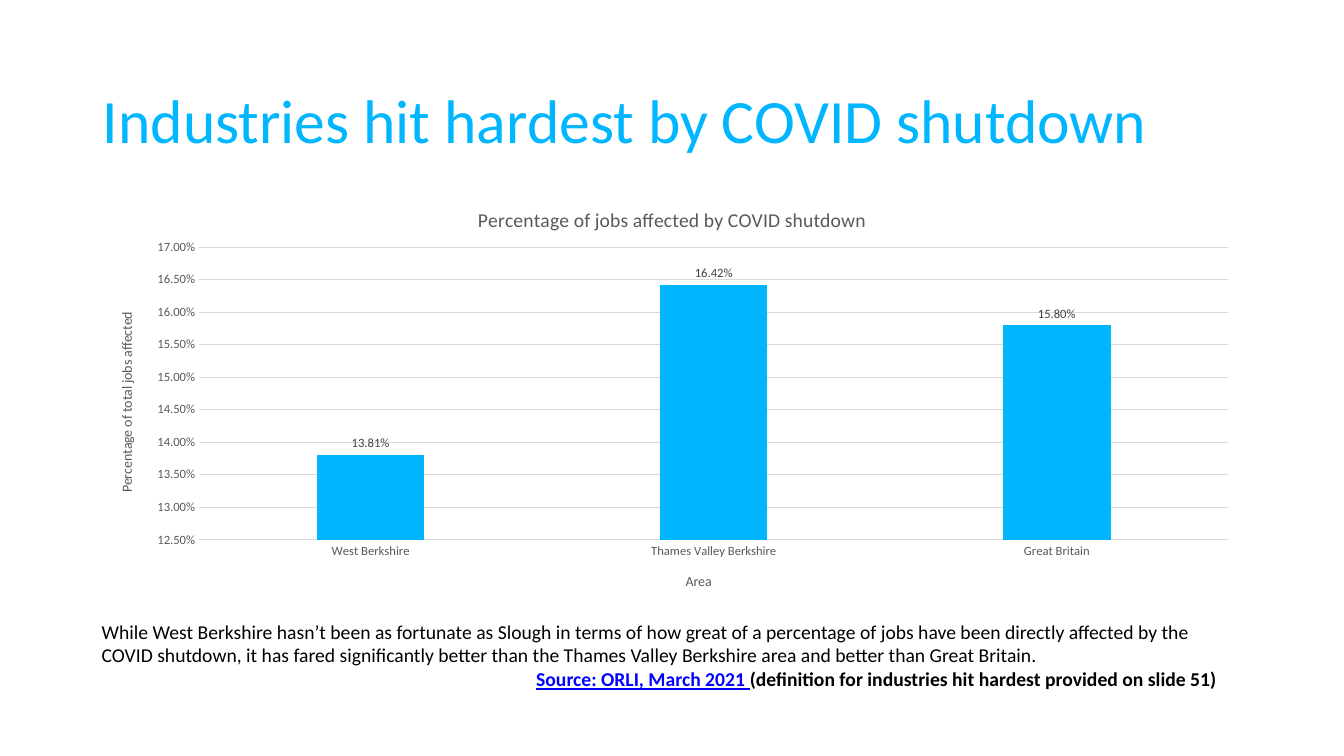
from lxml import etree
from pptx import Presentation
from pptx.chart.data import CategoryChartData
from pptx.dml.color import RGBColor
from pptx.enum import chart as c, text as t
from pptx.oxml.ns import qn
from pptx.util import Inches, Pt

BLUE, GREY, RULE = "00B7FF", "595959", "D9D9D9"


def style(font, size, color, bold=False):
    font.name, font.size, font.bold = "Calibri", Pt(size), bold
    font.color.rgb = RGBColor.from_string(color)


def place(element, index, **fractions):
    """Pin a chart part at fractions of the chart area."""
    for old in element.findall(qn("c:layout")):
        element.remove(old)
    layout = etree.Element(qn("c:layout"))
    manual = etree.SubElement(layout, qn("c:manualLayout"))
    if "w" in fractions:
        etree.SubElement(manual, qn("c:layoutTarget"), val="inner")
    for name in ("xMode", "yMode"):
        etree.SubElement(manual, qn("c:" + name), val="edge")
    for name, value in fractions.items():
        etree.SubElement(manual, qn("c:" + name), val=str(value))
    element.insert(index, layout)


presentation = Presentation()
presentation.slide_width, presentation.slide_height = Inches(13.33), Inches(7.5)
slide = presentation.slides.add_slide(presentation.slide_layouts[5])

# Title
title = slide.shapes.title
title.left, title.top = Inches(0.92), Inches(0.61)
title.width, title.height = Inches(11.5), Inches(1.24)
title.text_frame.vertical_anchor = t.MSO_ANCHOR.MIDDLE
paragraph = title.text_frame.paragraphs[0]
paragraph.alignment, paragraph.line_spacing = t.PP_ALIGN.LEFT, 0.9
run = paragraph.add_run()
run.text = "Industries hit hardest by COVID shutdown"
style(run.font, 44, BLUE)

# Chart
data = CategoryChartData(number_format="0.00%")
data.categories = ["West Berkshire", "Thames Valley Berkshire", "Great Britain"]
data.add_series("Series 1", [0.1381, 0.1642, 0.158])
chart = slide.shapes.add_chart(
    c.XL_CHART_TYPE.COLUMN_CLUSTERED,
    Inches(0.91), Inches(1.8), Inches(11.5), Inches(4.23), data).chart
style(chart.font, 10, "000000")
chart.has_legend = False

plot = chart.plots[0]
plot.gap_width, plot.overlap, plot.vary_by_categories = 219, -27, False
fill = plot.series[0].format.fill
fill.solid()
fill.fore_color.rgb = RGBColor.from_string(BLUE)
labels = plot.series[0].data_labels
labels.show_value = True
labels.position = c.XL_LABEL_POSITION.OUTSIDE_END
labels.number_format, labels.number_format_is_linked = "0.00%", False
style(labels.font, 9, "404040")

category_axis, value_axis = chart.category_axis, chart.value_axis
for axis in (category_axis, value_axis):
    axis.major_tick_mark = axis.minor_tick_mark = c.XL_TICK_MARK.NONE
    style(axis.tick_labels.font, 9, GREY)
value_axis.minimum_scale, value_axis.maximum_scale = 0.125, 0.17
value_axis.major_unit = 0.005
value_axis.tick_labels.number_format = "0.00%"
value_axis.tick_labels.number_format_is_linked = False
value_axis.format.line.fill.background()
for line in (category_axis.format.line, value_axis.major_gridlines.format.line):
    line.color.rgb = RGBColor.from_string(RULE)
    line.width = Pt(0.75)

for heading, words, size, x, y in (
        (chart.chart_title, "Percentage of jobs affected by COVID shutdown", 14, 0.33, 0.05),
        (category_axis.axis_title, "Area", 10, 0.51, 0.91),
        (value_axis.axis_title, "Percentage of total jobs affected", 10, 0.02, 0.3)):
    run = heading.text_frame.paragraphs[0].add_run()
    run.text = words
    style(run.font, size, GREY)
    place(heading._element, 1, x=x, y=y)
value_axis.axis_title._element.find(".//" + qn("a:bodyPr")).set("rot", "-5400000")
plot_area = chart._chartSpace.find(".//" + qn("c:plotArea"))
place(plot_area, 0, x=0.0926, y=0.154, w=0.8877, h=0.687)

# Commentary and source
commentary = slide.shapes.add_textbox(Inches(0.91), Inches(6.1), Inches(11.5), Inches(0.81))
frame = commentary.text_frame
frame.word_wrap = True
run = frame.paragraphs[0].add_run()
run.text = (
    "While West Berkshire hasn’t been as fortunate as Slough in terms of how great of a "
    "percentage of jobs have been directly affected by the COVID shutdown, it has fared "
    "significantly better than the Thames Valley Berkshire area and better than Great Britain.")
style(run.font, 14, "000000")
source = frame.add_paragraph()
source._p.get_or_add_pPr().set("marL", str(Inches(4.31)))
for words, color, underline in (
        ("Source: ORLI, March 2021 ", "0000FF", True),
        ("(definition for industries hit hardest provided on slide 51)", "000000", False)):
    run = source.add_run()
    run.text = words
    style(run.font, 14, color, bold=True)
    run.font.underline = underline

presentation.save("out.pptx")
